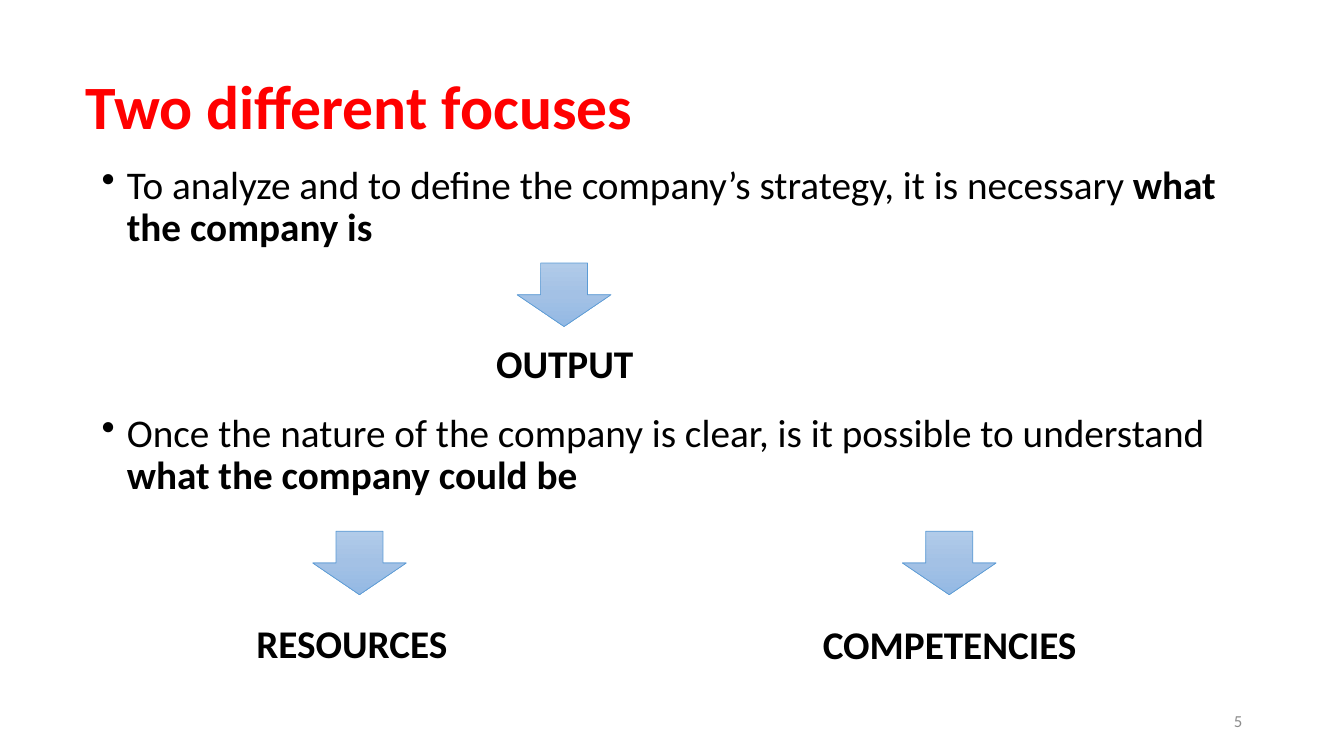
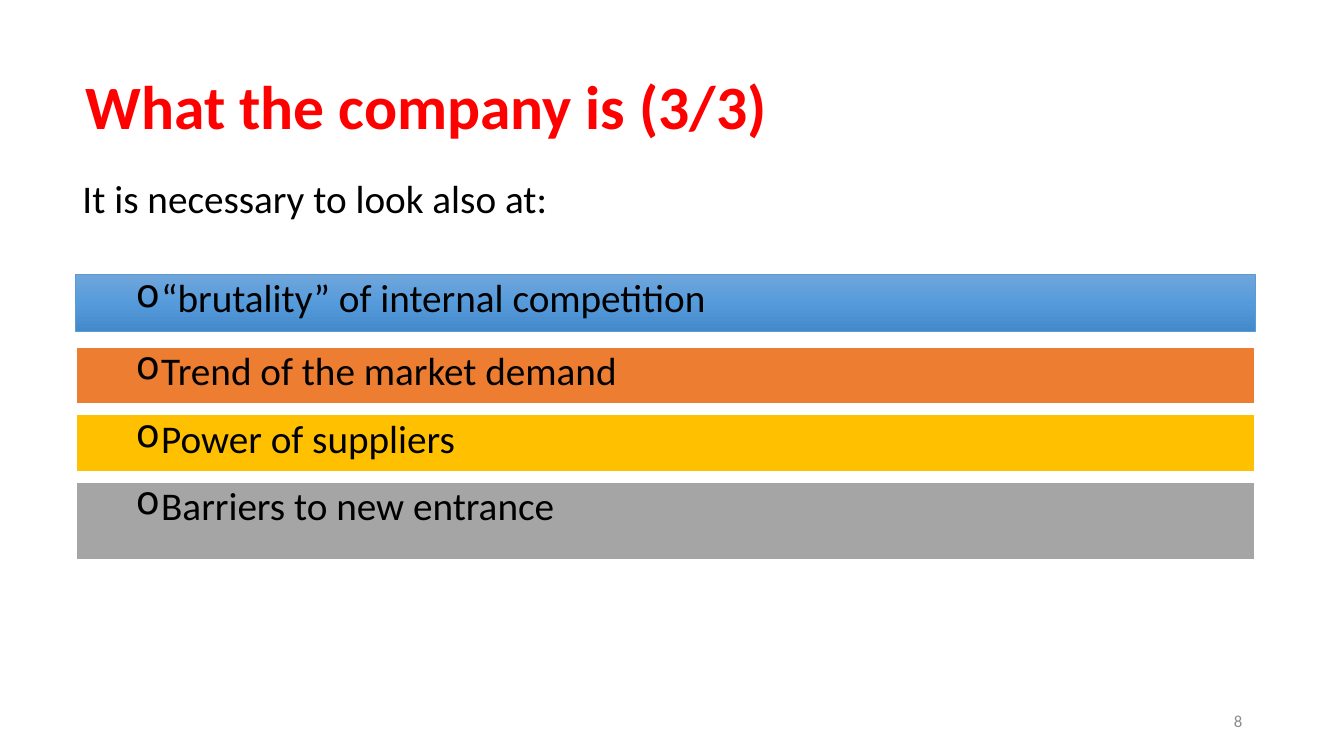
from copy import deepcopy
from pptx import Presentation
from pptx import util as u
from pptx.dml.color import RGBColor
from pptx.enum import shapes, text
from pptx.oxml.ns import qn
from lxml import etree

HUE = {"title": "FF0000", "text": "000000", "page": "8C8C8C",
       "edge": "5B9BD5", "white": "FFFFFF", "orange": "ED7D31",
       "gold": "FFC000", "gray": "A5A5A5"}
PALE = ["B1CBE9", "A3C1E5", "93B9E4"]
BLUE = ["71A6DB", "559BDB", "448ACA"]
rgb = RGBColor.from_string
KIND = shapes.MSO_SHAPE
ALIGN = text.PP_ALIGN
MID = text.MSO_ANCHOR.MIDDLE

deck = Presentation()
deck.slide_width, deck.slide_height = u.Inches(13.33), u.Inches(7.5)

# Text styles: font and paragraph values, bullet as (sign, margin, hang)
BODY = {"font": {"size": u.Pt(28)},
        "para": {"line_spacing": 0.9, "space_before": u.Pt(10)}}
STYLE = {
    "title": {"font": {"size": u.Pt(44), "bold": True}, "hue": "title",
              "para": {"line_spacing": 0.9}, "anchor": MID},
    "page": {"font": {"size": u.Pt(12)}, "hue": "page",
             "para": {"alignment": ALIGN.RIGHT}, "anchor": MID},
    "lead": BODY,
    "point": {**BODY, "bullet": ("•", 0.25, -0.25)},
    "label": {"font": {"size": u.Pt(28), "bold": True},
              "para": {**BODY["para"], "alignment": ALIGN.CENTER}},
    "bar": {"font": BODY["font"], "bullet": ("o", 0.75, -0.25),
            "para": {"line_spacing": 0.9, "space_before": u.Pt(5),
                     "alignment": ALIGN.LEFT, "level": 1}},
}


def write(slide, area, name, runs, fill=None, line=("edge", 0.5), kind=None):
    """Add a text box, or a filled shape; area is in percent of the slide."""
    x, y, w, h = area
    box = [int(deck.slide_width * x / 100), int(deck.slide_height * y / 100),
           int(deck.slide_width * w / 100), int(deck.slide_height * h / 100)]
    if kind is None:
        shape = slide.shapes.add_textbox(*box)
    else:
        shape = slide.shapes.add_shape(kind, *box)
        shape.shadow.inherit = False
        shape.line.color.rgb = rgb(HUE[line[0]])
        shape.line.width = u.Pt(line[1])
        if isinstance(fill, list):
            blend(shape, fill)
        else:
            shape.fill.solid()
            shape.fill.fore_color.rgb = rgb(HUE[fill])
    if not runs:
        return
    style = STYLE[name]
    frame = shape.text_frame
    frame.word_wrap = True
    frame.vertical_anchor = style.get("anchor", text.MSO_ANCHOR.TOP)
    para = frame.paragraphs[0]
    for key, value in style["para"].items():
        setattr(para, key, value)
    if "bullet" in style:
        sign, left, hang = style["bullet"]
        props = para._p.get_or_add_pPr()
        props.set("marL", str(u.Inches(left)))
        props.set("indent", str(u.Inches(hang)))
        etree.SubElement(props, qn("a:buChar")).set("char", sign)
    for words, extra in runs:
        run = para.add_run()
        run.text = words
        for key, value in {"name": "Calibri", **style["font"], **extra}.items():
            setattr(run.font, key, value)
        run.font.color.rgb = rgb(HUE[style.get("hue", "text")])


def blend(shape, hues):
    """Fill from top to bottom with three evenly spaced colours."""
    shape.fill.gradient()
    shape.fill.gradient_angle = 270
    stops = shape._element.spPr.find(qn("a:gradFill")).find(qn("a:gsLst"))
    stops.insert(1, deepcopy(stops[0]))
    for stop, pos, hue in zip(shape.fill.gradient_stops, (0, 0.5, 1), hues):
        stop.color.rgb = rgb(hue)
        stop.position = pos


# Shared parts: title and page number
pages = []
for head, num in [("Two different focuses", "5"),
                  ("What the company is (3/3)", "8")]:
    slide = deck.slides.add_slide(deck.slide_layouts[6])
    write(slide, (70.67, 92.67, 22.5, 5.33), "page", [(num, {})])
    write(slide, (5.63, 4.8, 86.27, 19.33), "title", [(head, {})])
    pages.append(slide)
focus, firm = pages
WIDE = 87.77

# Focuses: two points
for y, plain, strong in [
        (21.2, "To analyze and to define the company’s strategy, "
               "it is necessary ", "what the company is"),
        (54, "Once the nature of the company is clear, "
             "is it possible to understand ", "what the company could be")]:
    write(focus, (6.83, y, WIDE, 16.27), "point",
          [(plain, {}), (strong, {"bold": True})])

# Focuses: arrows, each with the label it leads to
for ax, ay, lx, ly, word in [
        (38.48, 34.8, 23.26, 44.93, "OUTPUT"),
        (23.26, 70.27, 7.43, 82, "RESOURCES"),
        (67.14, 70.27, 51.91, 82.13, "COMPETENCIES")]:
    write(focus, (ax, ay, 6.98, 8.4), None, [], PALE, kind=KIND.DOWN_ARROW)
    write(focus, (lx, ly, 37.51, 8.93), "label", [(word, {})])

# Company: lead line and stacked bars
write(firm, (5.4, 23.07, WIDE, 11.07), "lead",
      [("It is necessary to look also at:", {})])
RIM = ("white", 1.5)
top = 36.27
for words, fill, line, tall, gap in [
        ("“brutality” of internal competition", BLUE, ("edge", 0.5), 7.6, 2),
        ("Trend of the market demand", "orange", RIM, 7.6, 1.33),
        ("Power of suppliers", "gold", RIM, 7.6, 1.33),
        ("Barriers to new entrance", "gray", RIM, 10.4, 0)]:
    write(firm, (5.63, top, WIDE, tall), "bar", [(words, {})],
          fill, line, KIND.RECTANGLE)
    top += tall + gap

deck.save("out.pptx")
